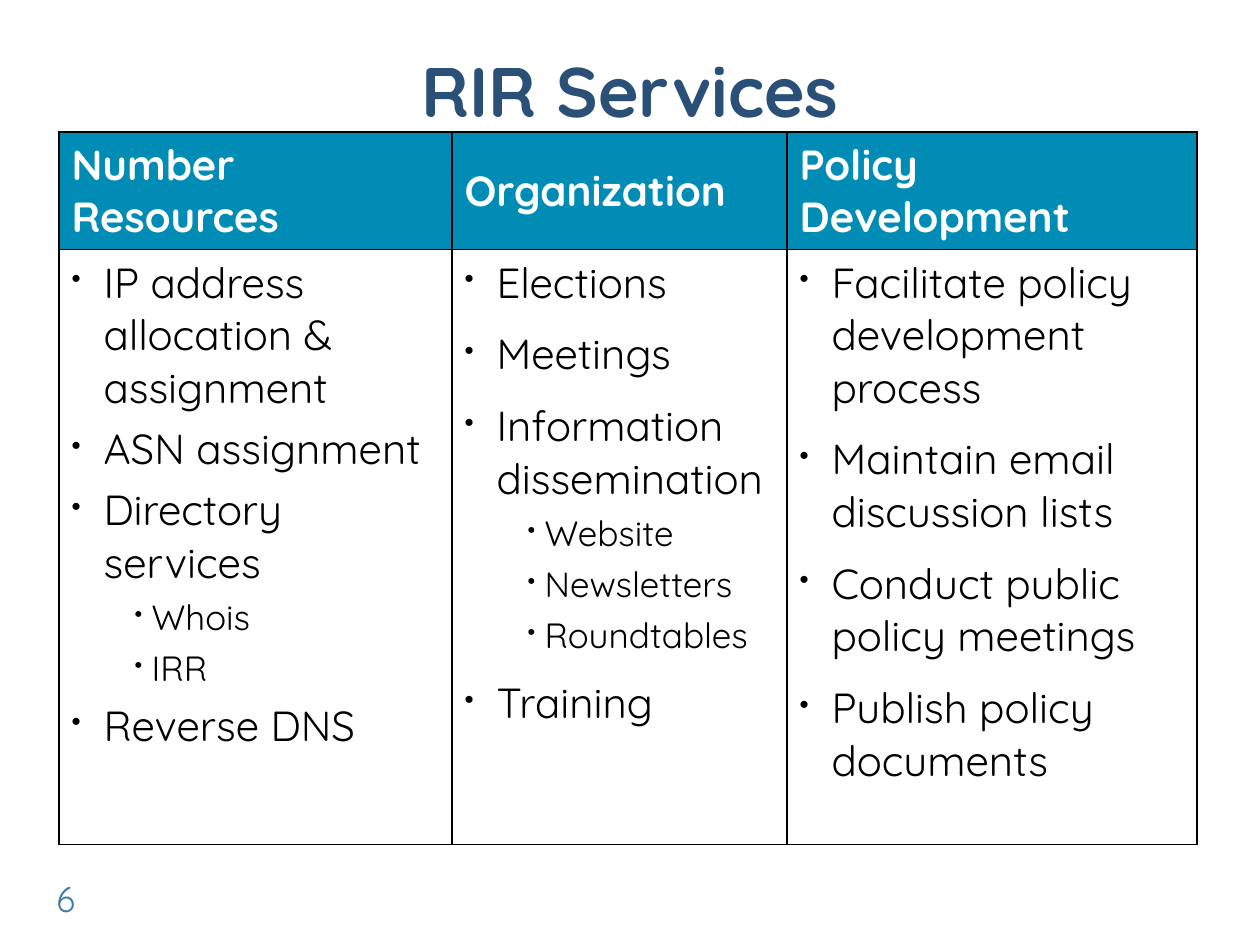
"""Build the RIR Services slide: a title, a three-column table and a page number."""
from lxml.etree import SubElement
from pptx import Presentation
from pptx.dml.color import RGBColor
from pptx.enum.text import MSO_ANCHOR as Anchor, PP_ALIGN as Align
from pptx.oxml.ns import qn
from pptx.util import Emu, Pt

COLORS = {"title": "2B5078", "header": "008CB5", "white": "FFFFFF",
          "text": "000000", "border": "000000", "number": "407BAC"}
COLUMNS = [
    (393, "Number Resources", [
        (0, "IP address allocation & assignment", 0),
        (0, "ASN assignment", 0),
        (0, "Directory services", 0),
        (1, "Whois", 0),
        (1, "IRR", 0),
        (0, "Reverse DNS", 0)]),
    (335, "Organization", [
        (0, "Elections", 6),
        (0, "Meetings", 6),
        (0, "Information dissemination", 0),
        (1, "Website", 0),
        (1, "Newsletters", 0),
        (1, "Roundtables", 6),
        (0, "Training", 0)]),
    (410, "Policy Development", [
        (0, "Facilitate policy development process", 6),
        (0, "Maintain email discussion lists", 6),
        (0, "Conduct public policy meetings", 6),
        (0, "Publish policy documents", 6)]),
]
ROW_HEIGHTS = [117, 595]
LEVELS = [{"size": 24, "margin": 32, "indent": -32, "before": 5},
          {"size": 20, "margin": 80, "indent": -17, "before": 4}]


def px(length):
    return Emu(round(length * 914400 / 126))


def style(paragraph, size, color, bold=False):
    font = paragraph.font
    font.name, font.size, font.bold = "Quicksand", Pt(size), bold
    font.color.rgb = RGBColor.from_string(COLORS[color])


presentation = Presentation()
presentation.slide_width, presentation.slide_height = px(1260), px(945)
slide = presentation.slides.add_slide(presentation.slide_layouts[5])

title = slide.shapes.title
title.left, title.top, title.width, title.height = px(0), px(10), px(1260), px(158)
title.text_frame.text = "RIR Services"
title.text_frame.vertical_anchor = Anchor.MIDDLE
title.text_frame.paragraphs[0].alignment = Align.CENTER
style(title.text_frame.paragraphs[0], 40, "title", True)

table_width = sum(width for width, _, _ in COLUMNS)
table = slide.shapes.add_table(2, len(COLUMNS), px(59), px(132),
                               px(table_width), px(sum(ROW_HEIGHTS))).table
table.first_row = table.horz_banding = False
for row, height in zip(table.rows, ROW_HEIGHTS):
    row.height = px(height)

for cell in table.iter_cells():
    properties = cell._tc.get_or_add_tcPr()
    for side in ("lnL", "lnR", "lnT", "lnB"):
        line = SubElement(properties, qn(f"a:{side}"), w=str(Pt(0.75)))
        fill = SubElement(line, qn("a:solidFill"))
        SubElement(fill, qn("a:srgbClr"), val=COLORS["border"])

for column, (width, heading, items) in enumerate(COLUMNS):
    table.columns[column].width = px(width)
    header, body = table.cell(0, column), table.cell(1, column)
    header.text = heading
    header.vertical_anchor = Anchor.MIDDLE
    header.fill.solid()
    header.fill.fore_color.rgb = RGBColor.from_string(COLORS["header"])
    style(header.text_frame.paragraphs[0], 24, "white", True)

    body.fill.background()
    body.text = "\n".join(text for _, text, _ in items)
    for index, (paragraph, (level, _, after)) in enumerate(
            zip(body.text_frame.paragraphs, items)):
        look = LEVELS[level]
        paragraph.level = level
        properties = paragraph._p.get_or_add_pPr()
        properties.set("marL", str(px(look["margin"])))
        properties.set("indent", str(px(look["indent"])))
        SubElement(properties, qn("a:buSzPct"), val="65000")
        SubElement(properties, qn("a:buChar"), char="•")
        if index:
            paragraph.space_before = Pt(look["before"])
        paragraph.space_after = Pt(after)
        style(paragraph, look["size"], "text")

number = slide.shapes.add_textbox(px(44), px(871), px(98), px(50))
number.text_frame.word_wrap = True
number.text_frame.text = "6"
style(number.text_frame.paragraphs[0], 20, "number")

presentation.save("out.pptx")
